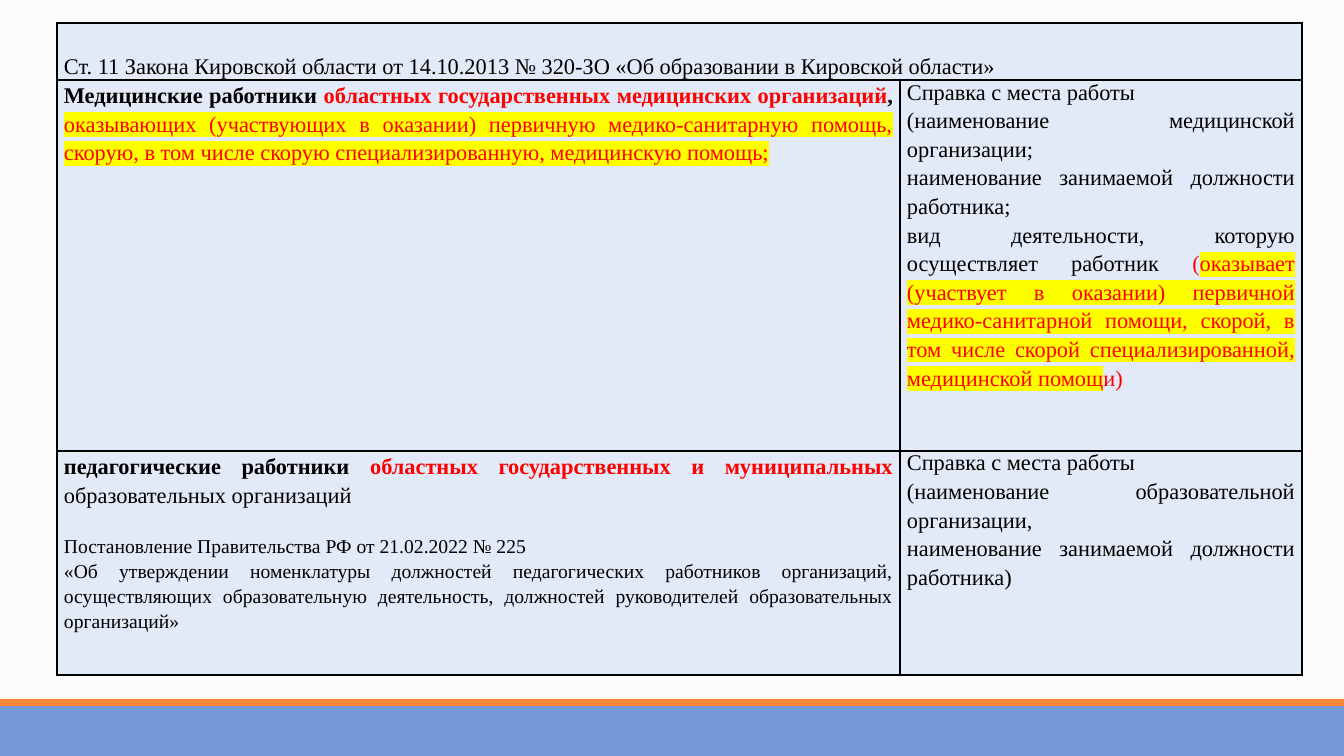
from dataclasses import dataclass
from typing import Optional

from lxml.etree import SubElement
from pptx import Presentation
from pptx.dml.color import RGBColor
from pptx.enum.shapes import MSO_SHAPE
from pptx.enum.text import PP_ALIGN
from pptx.oxml import parse_xml
from pptx.oxml.ns import nsdecls, qn
from pptx.util import Emu, Pt

BLACK = RGBColor(0x00, 0x00, 0x00)
RED = RGBColor(0xFF, 0x00, 0x00)
YELLOW = RGBColor(0xFF, 0xFF, 0x00)
PALE_BLUE = RGBColor(0xE3, 0xEA, 0xF7)
BLUE = RGBColor(0x75, 0x98, 0xD9)
ORANGE = RGBColor(0xFE, 0x86, 0x37)
PAPER = RGBColor(0xFC, 0xFC, 0xFC)
FONT = "Times New Roman"
BORDER_WIDTH = Pt(1)


def px(length: int) -> Emu:
    return Emu(round(length * 914400 / 100.8))


@dataclass
class Span:
    text: str
    color: RGBColor = BLACK
    bold: bool = False
    highlight: Optional[RGBColor] = None


@dataclass
class Para:
    spans: list[Span]
    size: int = 16
    spacing: float = 1.15
    before: float = 0


@dataclass
class CellText:
    row: int
    column: int
    paras: list[Para]
    top: int = 0


@dataclass
class Band:
    top: int
    height: int
    color: RGBColor


def plain(text: str, size: int = 16, spacing: float = 1.15, before: float = 0) -> Para:
    return Para([Span(text)], size, spacing, before)


BANDS = [Band(706, 50, BLUE), Band(699, 7, ORANGE)]
COLUMN_WIDTHS = [843, 402]
ROW_HEIGHTS = [57, 371, 224]
CERTIFICATE = plain("Справка с места работы", spacing=1.0)

CELLS = [
    CellText(0, 0, [
        plain("Ст. 11 Закона Кировской области от 14.10.2013 № 320-ЗО "
              "«Об образовании в Кировской области»"),
    ], top=28),
    CellText(1, 0, [
        Para([
            Span("Медицинские работники ", bold=True),
            Span("областных государственных медицинских организаций", RED, True),
            Span(", ", bold=True),
            Span("оказывающих (участвующих в оказании) первичную медико-санитарную "
                 "помощь, скорую, в том числе скорую специализированную, "
                 "медицинскую помощь;", RED, highlight=YELLOW),
        ]),
    ]),
    CellText(1, 1, [
        CERTIFICATE,
        plain("(наименование медицинской организации;"),
        plain("наименование занимаемой должности работника;"),
        Para([
            Span("вид деятельности, которую осуществляет работник "),
            Span("(", RED),
            Span("оказывает (участвует в оказании) первичной медико-санитарной "
                 "помощи, скорой, в том числе скорой специализированной, "
                 "медицинской помощ", RED, highlight=YELLOW),
            Span("и)", RED),
        ]),
    ]),
    CellText(2, 0, [
        Para([
            Span("педагогические работники ", bold=True),
            Span("областных государственных и муниципальных", RED, True),
            Span(" образовательных организаций"),
        ]),
        plain("Постановление Правительства РФ от 21.02.2022 № 225", 14, before=17.6),
        plain("«Об утверждении номенклатуры должностей педагогических работников "
              "организаций, осуществляющих образовательную деятельность, должностей "
              "руководителей образовательных организаций»", 14),
    ]),
    CellText(2, 1, [
        CERTIFICATE,
        plain("(наименование образовательной организации,"),
        plain("наименование занимаемой должности работника)"),
    ]),
]


def add_band(slide, band: Band, width: int) -> None:
    stripe = slide.shapes.add_shape(
        MSO_SHAPE.RECTANGLE, 0, px(band.top), width, px(band.height))
    stripe.shadow.inherit = False
    stripe.fill.solid()
    stripe.fill.fore_color.rgb = band.color
    stripe.line.fill.background()


def add_span(paragraph, span: Span, size: int) -> None:
    run = paragraph.add_run()
    run.text = span.text
    font = run.font
    font.size = Pt(size)
    font.bold = span.bold
    font.color.rgb = span.color
    if span.highlight is not None:
        # The highlight stands between the fill and the typeface
        mark = SubElement(run._r.get_or_add_rPr(), qn("a:highlight"))
        SubElement(mark, qn("a:srgbClr")).set("val", str(span.highlight))
    font.name = FONT


def style_cell(cell) -> None:
    cell.fill.solid()
    cell.fill.fore_color.rgb = PALE_BLUE
    cell.margin_left = cell.margin_right = px(7)
    cell.margin_top = cell.margin_bottom = 0
    properties = cell._tc.get_or_add_tcPr()
    for index, side in enumerate(("lnL", "lnR", "lnT", "lnB")):
        properties.insert(index, parse_xml(
            f'<a:{side} {nsdecls("a")} w="{BORDER_WIDTH}"><a:solidFill>'
            f'<a:srgbClr val="{BLACK}"/></a:solidFill></a:{side}>'))


def write_cell(cell, content: CellText) -> None:
    cell.margin_top = px(content.top)
    frame = cell.text_frame
    for index, para in enumerate(content.paras):
        paragraph = frame.add_paragraph() if index else frame.paragraphs[0]
        paragraph.alignment = PP_ALIGN.JUSTIFY
        paragraph.line_spacing = para.spacing
        paragraph.space_before = Pt(para.before)
        for span in para.spans:
            add_span(paragraph, span, para.size)


def add_requirements(slide) -> None:
    table = slide.shapes.add_table(
        len(ROW_HEIGHTS), len(COLUMN_WIDTHS), px(57), px(23),
        px(sum(COLUMN_WIDTHS)), px(sum(ROW_HEIGHTS))).table
    table.first_row = table.horz_banding = False
    for column, width in zip(table.columns, COLUMN_WIDTHS):
        column.width = px(width)
    for row, height in zip(table.rows, ROW_HEIGHTS):
        row.height = px(height)
    for cell in table.iter_cells():
        style_cell(cell)
    table.cell(0, 0).merge(table.cell(0, 1))
    for content in CELLS:
        write_cell(table.cell(content.row, content.column), content)


def main() -> None:
    prs = Presentation()
    prs.slide_width, prs.slide_height = px(1344), px(756)
    slide = prs.slides.add_slide(prs.slide_layouts[6])
    slide.background.fill.solid()
    slide.background.fill.fore_color.rgb = PAPER

    # Footer bands
    for band in BANDS:
        add_band(slide, band, prs.slide_width)

    # Table of worker groups and required certificates
    add_requirements(slide)
    prs.save("out.pptx")


if __name__ == "__main__":
    main()
